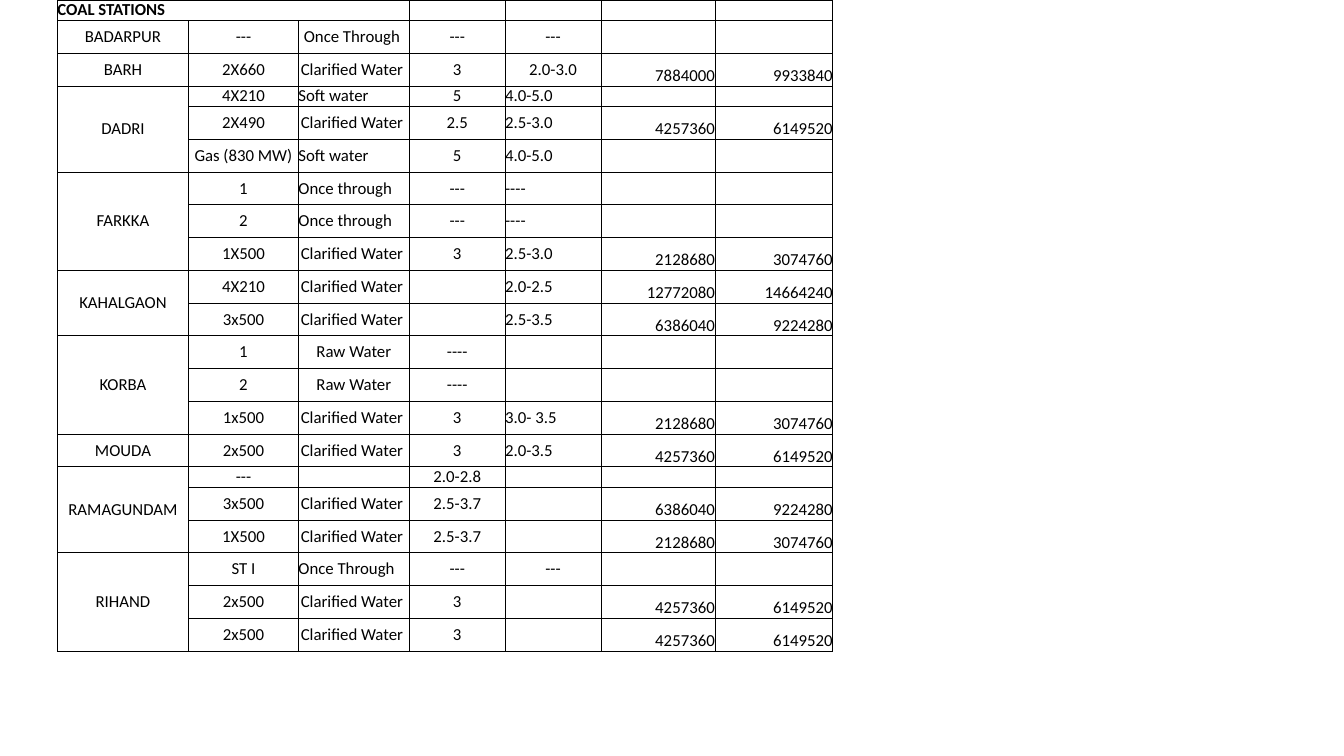
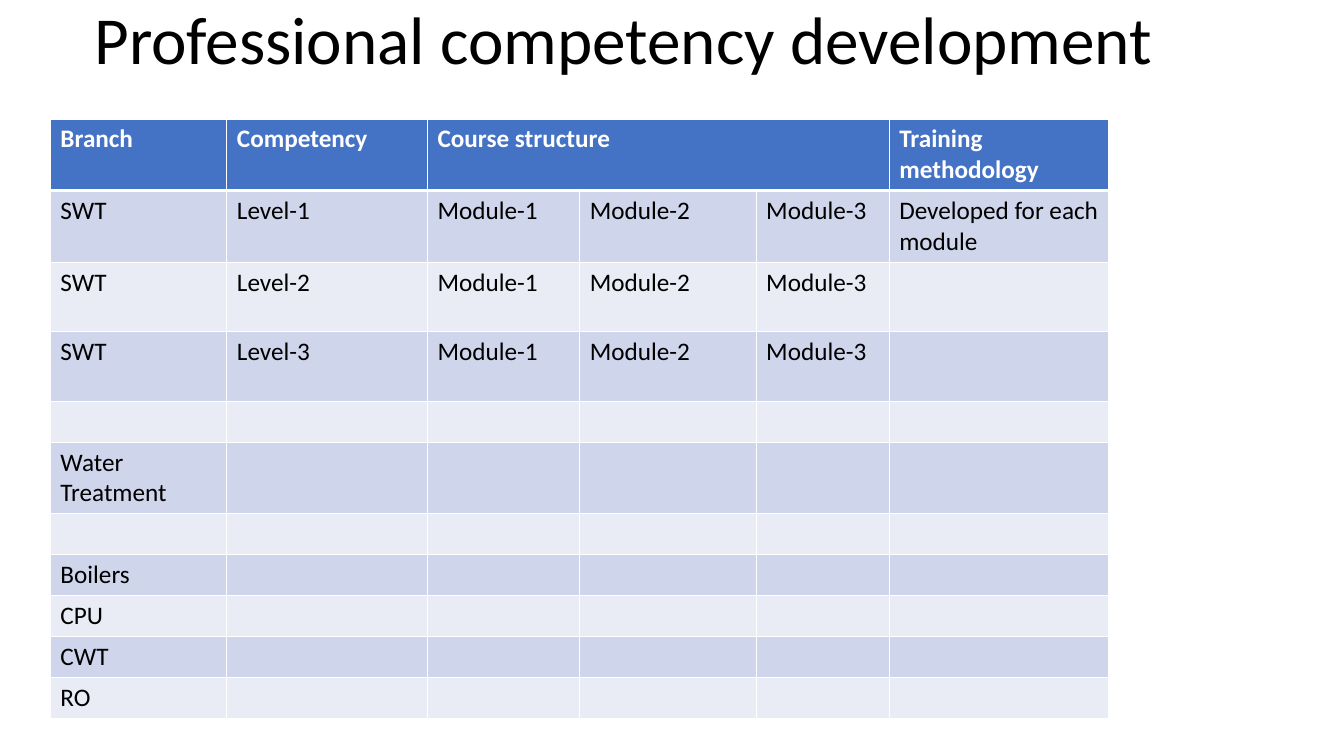
from lxml import etree
from pptx import Presentation
from pptx.dml.color import RGBColor
from pptx.enum.text import MSO_ANCHOR as ANCHOR, MSO_AUTO_SIZE as AUTO_SIZE, PP_ALIGN as ALIGN
from pptx.oxml.ns import qn
from pptx.util import Inches, Pt

FONT = "Calibri"
BLACK = RGBColor(0x00, 0x00, 0x00)
WHITE = RGBColor(0xFF, 0xFF, 0xFF)
BLUE = RGBColor(0x44, 0x72, 0xC4)
BAND_DARK = RGBColor(0xCF, 0xD5, 0xEA)
BAND_LIGHT = RGBColor(0xE9, 0xEB, 0xF5)


def make_table(s, left, top, widths, heights):
    """Add an unbanded table with the given column widths and row heights."""
    frame = s.shapes.add_table(len(heights), len(widths), Inches(left), Inches(top),
                               Inches(sum(widths)), Inches(sum(heights)))
    table = frame.table
    table.first_row = table.horz_banding = False
    for column, width in zip(table.columns, widths):
        column.width = Inches(width)
    for row, height in zip(table.rows, heights):
        row.height = Inches(height)
    return table


def style_cell(cell, text, size, color, bold, fill, line, widths):
    """Fill in one cell; widths are its left, right, top and bottom borders in points."""
    p = cell.text_frame.paragraphs[0]
    p.text = text
    if text:
        font = p.runs[0].font
        font.name, font.size, font.bold = FONT, Pt(size), bold
        font.color.rgb = color
    else:
        etree.SubElement(p._p, qn("a:endParaRPr"), sz=str(size * 100))
    if fill is None:
        cell.fill.background()
    else:
        cell.fill.solid()
        cell.fill.fore_color.rgb = fill
    tc_pr = cell._tc.get_or_add_tcPr()
    for i, (side, width) in enumerate(zip("LRTB", widths)):
        ln = etree.Element(qn(f"a:ln{side}"), w=str(Pt(width)))
        solid = etree.SubElement(ln, qn("a:solidFill"))
        etree.SubElement(solid, qn("a:srgbClr"), val=str(line))
        tc_pr.insert(i, ln)


prs = Presentation()
prs.slide_width, prs.slide_height = Inches(13.33), Inches(7.5)
blank = prs.slide_layouts[6]

# Slide 1: water use by coal station; an empty name continues the station above
CW = "Clarified Water "
STATIONS = [
    ("COAL STATIONS", "", "", "", "", "", ""),
    ("BADARPUR", "---", "Once Through ", "---", "---", "", ""),
    ("BARH", "2X660", CW, "3", "2.0-3.0", "7884000", "9933840"),
    ("DADRI", "4X210", "Soft water", "5", "4.0-5.0", "", ""),
    ("", "2X490", CW, "2.5", "2.5-3.0", "4257360", "6149520"),
    ("", "Gas (830 MW)", "Soft water", "5", "4.0-5.0", "", ""),
    ("FARKKA", "1", "Once through", "---", "----", "", ""),
    ("", "2", "Once through", "---", "----", "", ""),
    ("", "1X500", CW, "3", "2.5-3.0", "2128680", "3074760"),
    ("KAHALGAON", "4X210", CW, "", "2.0-2.5", "12772080", "14664240"),
    ("", "3x500", CW, "", "2.5-3.5", "6386040", "9224280"),
    ("KORBA", "1", "Raw Water", "----", "", "", ""),
    ("", "2", "Raw Water", "----", "", "", ""),
    ("", "1x500", CW, "3", "3.0- 3.5", "2128680", "3074760"),
    ("MOUDA", "2x500", CW, "3", "2.0-3.5", "4257360", "6149520"),
    ("RAMAGUNDAM", "---", "", "2.0-2.8", "", "", ""),
    ("", "3x500", CW, "2.5-3.7", "", "6386040", "9224280"),
    ("", "1X500", CW, "2.5-3.7", "", "2128680", "3074760"),
    ("RIHAND", "ST I", "Once Through", "---", "---", "", ""),
    ("", "2x500", CW, "3", "", "4257360", "6149520"),
    ("", "2x500", CW, "3", "", "4257360", "6149520"),
]
LEFT_WATERS = ("Soft water", "Once through", "Once Through")
CENTRED_RANGES = ("---", "2.0-3.0")
SHORT_ROWS = (0, 3, 15)

s = prs.slides.add_slide(blank)
heights = [0.2 if r in SHORT_ROWS else 5.85 / 18 for r in range(len(STATIONS))]
table = make_table(s, 0.57, 0, [1.3, 1.09, 1.1, 0.95, 0.95, 1.13, 1.17], heights)
for r, row in enumerate(STATIONS):
    for c, text in enumerate(row):
        cell = table.cell(r, c)
        cell.margin_left = cell.margin_right = cell.margin_top = cell.margin_bottom = 0
        style_cell(cell, text, 12, BLACK, r == 0, None, BLACK, [0.5] * 4)
        cell.vertical_anchor = ANCHOR.BOTTOM if c > 4 else ANCHOR.MIDDLE
        if c > 4:
            align = ALIGN.RIGHT
        elif r == 0 or text in LEFT_WATERS or (c == 4 and text not in CENTRED_RANGES):
            align = ALIGN.LEFT
        else:
            align = ALIGN.CENTER
        cell.text_frame.paragraphs[0].alignment = align

# Merge the heading and the rows of each station
table.cell(0, 0).merge(table.cell(0, 2))
starts = [r for r, row in enumerate(STATIONS) if row[0]] + [len(STATIONS)]
for first, following in zip(starts, starts[1:]):
    if following - first > 1:
        table.cell(first, 0).merge(table.cell(following - 1, 0))

# Slide 2: competency table
MODULES = ("Module-1", "Module-2", "Module-3")
COURSES = [
    ("Branch", "Competency", "Course structure", "", "", "Training methodology"),
    ("SWT", "Level-1", *MODULES, "Developed for each module"),
    ("SWT", "Level-2", *MODULES, ""),
    ("SWT", "Level-3", *MODULES, ""),
]
for branch in ("", "Water Treatment", "", "Boilers", "CPU", "CWT", "RO"):
    COURSES.append((branch, "", "", "", "", ""))

s = prs.slides.add_slide(blank)
table = make_table(s, 0.5, 1.18, [1.75, 1.99, 1.51, 1.75, 1.32, 2.18], [0.69] * 4 + [0.4] * 7)
for r, row in enumerate(COURSES):
    header = r == 0
    fill = BLUE if header else BAND_DARK if r % 2 else BAND_LIGHT
    borders = [1, 1, 3 if r == 1 else 1, 3 if header else 1]
    for c, text in enumerate(row):
        style_cell(table.cell(r, c), text, 18, WHITE if header else BLACK, header,
                   fill, WHITE, borders)
table.cell(0, 2).merge(table.cell(0, 4))

# Title
title = s.shapes.add_textbox(Inches(0.78), Inches(-0.08), Inches(10.81), Inches(0.91))
tf = title.text_frame
tf.word_wrap = False
tf.auto_size = AUTO_SIZE.SHAPE_TO_FIT_TEXT
p = tf.paragraphs[0]
p.text = "Professional competency development"
p.alignment = ALIGN.CENTER
font = p.runs[0].font
font.name, font.size = FONT, Pt(48)
font.color.rgb = BLACK

prs.save("out.pptx")
